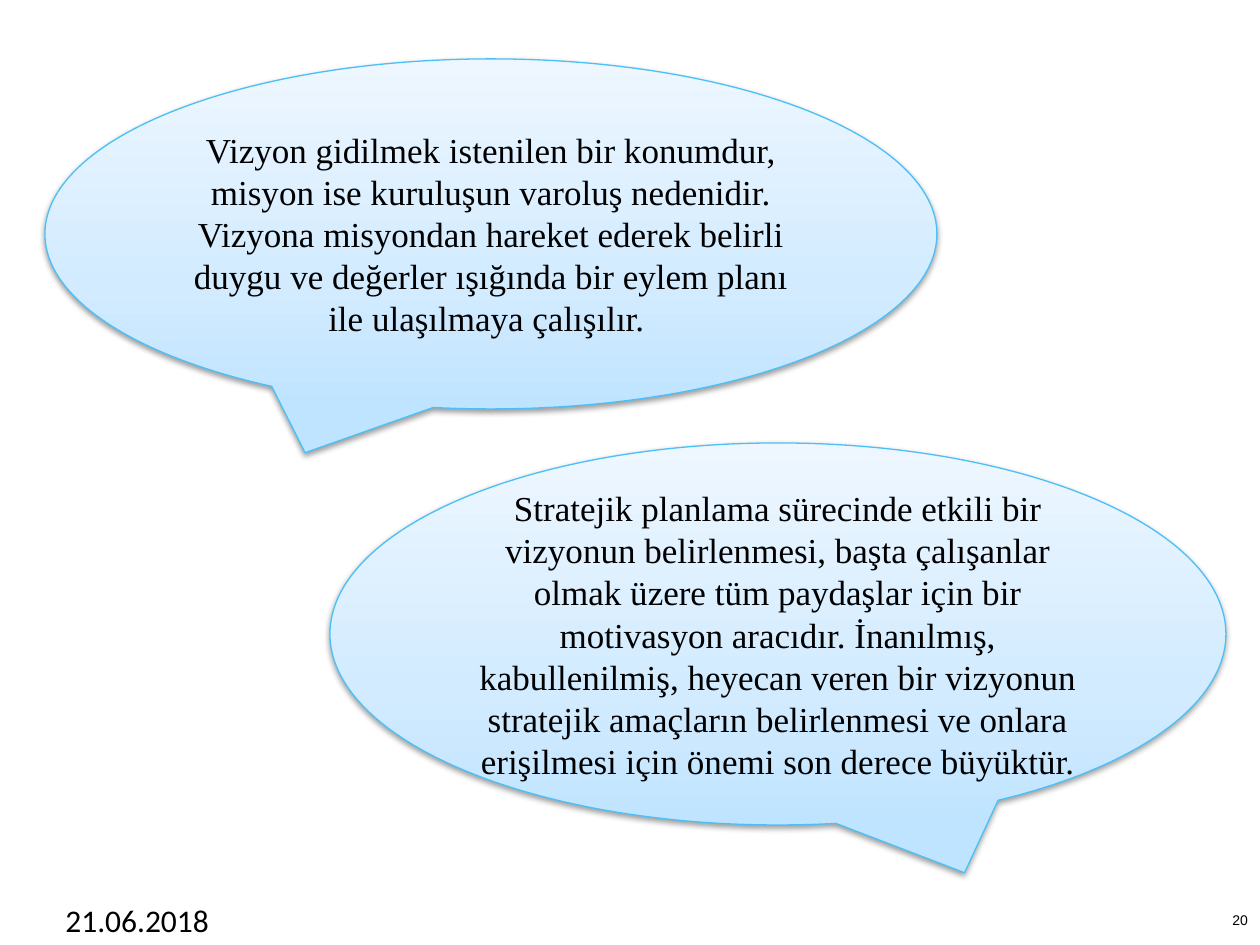
from lxml.etree import SubElement
from pptx import Presentation
from pptx.dml.color import RGBColor
from pptx.enum.shapes import MSO_SHAPE
from pptx.enum.text import MSO_ANCHOR, PP_ALIGN
from pptx.oxml.ns import qn
from pptx.util import Pt

PX = 914400 / 126  # EMU per px


def box(*lengths):
    return [round(length * PX) for length in lengths]


def style(paragraph, font_name, size, align, color="000000"):
    paragraph.alignment = align
    paragraph.font.name = font_name
    paragraph.font.size = Pt(size)
    paragraph.font.color.rgb = RGBColor.from_string(color)


deck = Presentation()
deck.slide_width, deck.slide_height = box(1260, 945)
slide = deck.slides.add_slide(deck.slide_layouts[6])

# Date and slide number
date = slide.shapes.add_textbox(*box(53, 895, 294, 50)).text_frame
date.word_wrap = True
date.text = "21.06.2018"
style(date.paragraphs[0], "Calibri", 18, PP_ALIGN.LEFT)

number = slide.shapes.add_textbox(*box(954, 895, 294, 50)).text_frame
number.word_wrap = True
number.vertical_anchor = MSO_ANCHOR.MIDDLE
number.margin_left = number.margin_right = number.margin_top = number.margin_bottom = 0
number.text = "20"
style(number.paragraphs[0], "Arial", 8, PP_ALIGN.RIGHT)

# Speech bubbles: place, tail mirrored to the right, wording
bubbles = [
    ((45, 59, 892, 350), False,
     "Vizyon gidilmek istenilen bir konumdur, misyon ise kuruluşun varoluş "
     "nedenidir. Vizyona misyondan hareket ederek belirli duygu ve değerler "
     "ışığında bir eylem planı ile ulaşılmaya çalışılır. "),
    ((330, 443, 896, 382), True,
     "Stratejik planlama sürecinde etkili bir vizyonun belirlenmesi, başta "
     "çalışanlar olmak üzere tüm paydaşlar için bir motivasyon aracıdır. "
     "İnanılmış, kabullenilmiş, heyecan veren bir vizyonun stratejik amaçların "
     "belirlenmesi ve onlara erişilmesi için önemi son derece büyüktür."),
]
gradient = [(0, "BFE4FF"), (35, "D2EBFF"), (100, "EEF7FF")]

for place, mirrored, wording in bubbles:
    bubble = slide.shapes.add_shape(MSO_SHAPE.OVAL_CALLOUT, *box(*place))
    properties = bubble.element.spPr
    if mirrored:
        properties.find(qn("a:xfrm")).set("flipH", "1")

    # Gradient from bottom to top
    bubble.fill.gradient()
    bubble.fill.gradient_angle = 90
    stops = properties.find(qn("a:gradFill")).find(qn("a:gsLst"))
    for stop in list(stops):
        stops.remove(stop)
    for position, color in gradient:
        stop = SubElement(stops, qn("a:gs"), pos=str(position * 1000))
        SubElement(stop, qn("a:srgbClr"), val=color)

    bubble.line.color.rgb = RGBColor.from_string("4BC0F8")
    bubble.line.width = Pt(0.75)

    # Soft shadow below
    bubble.shadow.inherit = False
    shadow = SubElement(properties.find(qn("a:effectLst")), qn("a:outerShdw"),
                        blurRad=str(Pt(3.1)), dist=str(Pt(1.6)),
                        dir="5400000", rotWithShape="0")
    shade = SubElement(shadow, qn("a:srgbClr"), val="000000")
    SubElement(shade, qn("a:alpha"), val="38000")

    bubble.text_frame.word_wrap = True
    bubble.text_frame.vertical_anchor = MSO_ANCHOR.MIDDLE
    bubble.text_frame.text = wording
    style(bubble.text_frame.paragraphs[0], "Times New Roman", 20, PP_ALIGN.CENTER)

deck.save("out.pptx")
